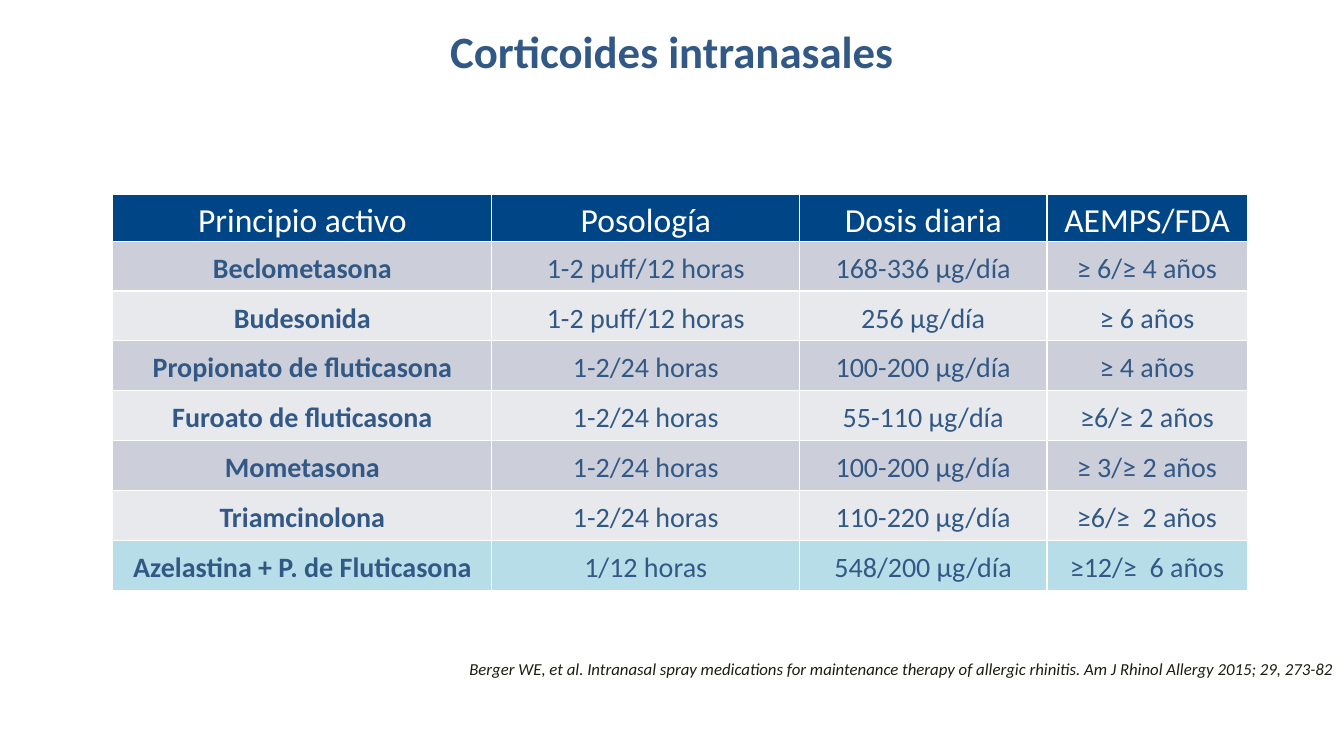
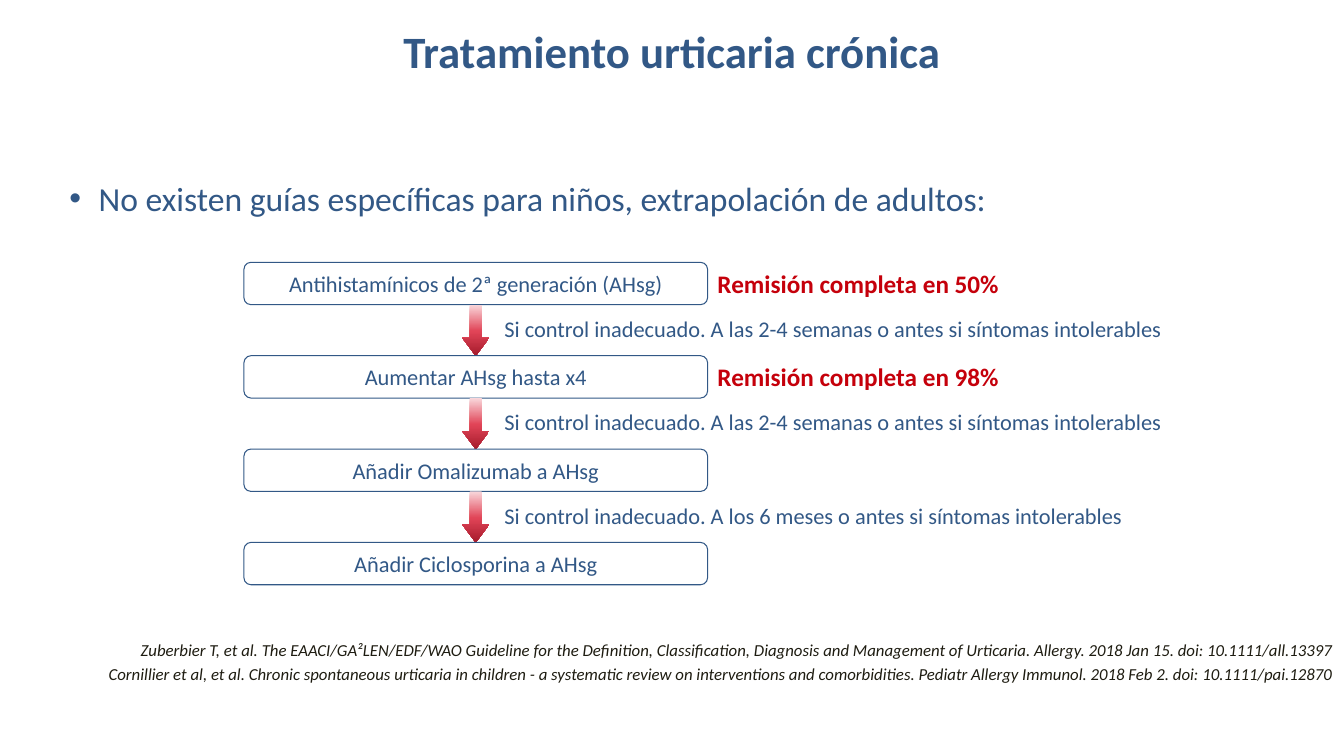
import pptx
import pptx.util
import pptx.dml.color
import pptx.enum.shapes
import pptx.enum.text
import pptx.oxml
import pptx.oxml.ns

ALIGN = pptx.enum.text.PP_ALIGN
ANCHOR = pptx.enum.text.MSO_ANCHOR
SHAPE = pptx.enum.shapes.MSO_SHAPE
NS = pptx.oxml.ns.nsdecls("a")


def color(hex_value):
    return pptx.dml.color.RGBColor.from_string(hex_value)


class Deck:
    FONT = "Calibri"
    BLUE = "325886"
    NAVY = "004586"
    WHITE = "FFFFFF"
    RED = "C5000B"
    BANDS = ("CCCFD9", "E7E9ED")
    HIGHLIGHT = "B7DEE8"
    SOURCE_INK = "1E1C11"
    ARROW_STOPS = ((0, "F9D8DC"), (52, "E14457"), (100, "A51B2C"))
    COLUMNS = ROWS = 100

    def __init__(self):
        self.presentation = pptx.Presentation()
        self.presentation.slide_width = pptx.util.Inches(13.33)
        self.presentation.slide_height = pptx.util.Inches(7.5)
        self.slide = None

    def x(self, columns):
        return round(self.presentation.slide_width * columns / self.COLUMNS)

    def y(self, rows):
        return round(self.presentation.slide_height * rows / self.ROWS)

    def place(self, left, top, width, height):
        return self.x(left), self.y(top), self.x(width), self.y(height)

    def new_slide(self, title):
        self.slide = self.presentation.slides.add_slide(self.presentation.slide_layouts[6])
        self.text((5, 2.35, 90, 8.8), [title], 32, bold=True, align=ALIGN.CENTER)

    def styled_run(self, paragraph, words, size, ink=BLUE, bold=False, italic=False,
                   align=ALIGN.LEFT):
        paragraph.alignment = align
        run = paragraph.add_run()
        run.text = words
        run.font.name = self.FONT
        run.font.size = pptx.util.Pt(size)
        run.font.bold = bold
        run.font.italic = italic
        run.font.color.rgb = color(ink)

    def text(self, area, lines, size, anchor=ANCHOR.MIDDLE, space=0, **style):
        frame = self.slide.shapes.add_textbox(*self.place(*area)).text_frame
        frame.word_wrap = True
        frame.vertical_anchor = anchor
        for number, words in enumerate(lines):
            paragraph = frame.paragraphs[0]
            if number:
                paragraph = frame.add_paragraph()
                paragraph.space_before = pptx.util.Pt(space)
            self.styled_run(paragraph, words, size, **style)
        return frame

    def bullet(self, area, words):
        paragraph = self.text(area, [words], 24, anchor=ANCHOR.TOP).paragraphs[0]
        properties = paragraph._p.get_or_add_pPr()
        properties.set("marL", str(pptx.util.Inches(0.88)))
        properties.set("indent", str(pptx.util.Inches(-0.29)))
        properties.append(pptx.oxml.parse_xml(f'<a:buFont {NS} typeface="Arial"/>'))
        properties.append(pptx.oxml.parse_xml(f'<a:buChar {NS} char="•"/>'))

    def sources(self, top, lines):
        self.text((5, top, 95, 7), lines, 12, anchor=ANCHOR.TOP, space=2.4,
                  ink=self.SOURCE_INK, italic=True, align=ALIGN.RIGHT)

    def step(self, area, words):
        box = self.slide.shapes.add_shape(SHAPE.ROUNDED_RECTANGLE, *self.place(*area))
        box.shadow.inherit = False
        box.fill.background()
        box.line.color.rgb = color(self.BLUE)
        box.line.width = pptx.util.Pt(0.75)
        box.text_frame.word_wrap = True
        box.text_frame.vertical_anchor = ANCHOR.MIDDLE
        self.styled_run(box.text_frame.paragraphs[0], words, 16, align=ALIGN.CENTER)

    def arrow(self, area):
        arrow = self.slide.shapes.add_shape(SHAPE.DOWN_ARROW, *self.place(*area))
        arrow.shadow.inherit = False
        arrow.adjustments[0] = 0.43
        arrow.adjustments[1] = 0.66
        arrow.line.fill.background()
        stops = "".join(f'<a:gs pos="{share * 1000}"><a:srgbClr val="{ink}"/></a:gs>'
                        for share, ink in self.ARROW_STOPS)
        gradient = (f'<a:gradFill {NS} rotWithShape="1"><a:gsLst>{stops}</a:gsLst>'
                    '<a:lin ang="5400000" scaled="0"/></a:gradFill>')
        arrow._element.spPr.find(pptx.oxml.ns.qn("a:prstGeom")).addnext(
            pptx.oxml.parse_xml(gradient))

    def cell(self, cell, words, size, fill, **style):
        cell.margin_left = cell.margin_right = pptx.util.Inches(0.07)
        cell.margin_top = cell.margin_bottom = 0
        cell.vertical_anchor = ANCHOR.MIDDLE
        properties = cell._tc.get_or_add_tcPr()
        for side in "LRTB":
            properties.append(pptx.oxml.parse_xml(
                f'<a:ln{side} {NS} w="12700"><a:solidFill>'
                f'<a:srgbClr val="{self.WHITE}"/></a:solidFill></a:ln{side}>'))
        cell.fill.solid()
        cell.fill.fore_color.rgb = color(fill)
        paragraph = cell.text_frame.paragraphs[0]
        paragraph.line_spacing = 1.15
        paragraph.space_after = pptx.util.Pt(10)
        self.styled_run(paragraph, words, size, align=ALIGN.CENTER, **style)

    def table(self, left, top, widths, header_height, row_height, header, records):
        heights = [header_height] + [row_height] * len(records)
        table = self.slide.shapes.add_table(
            len(heights), len(widths),
            *self.place(left, top, sum(widths), sum(heights))).table
        table.horz_banding = False
        for column, width in zip(table.columns, widths):
            column.width = self.x(width)
        for row, height in zip(table.rows, heights):
            row.height = self.y(height)
        for column, words in enumerate(header):
            self.cell(table.cell(0, column), words, 24, self.NAVY, ink=self.WHITE)
        for row, record in enumerate(records, 1):
            fill = self.HIGHLIGHT if row == len(records) else self.BANDS[(row - 1) % 2]
            for column, words in enumerate(record):
                self.cell(table.cell(row, column), words, 20, fill, bold=column == 0)


def corticoids(deck):
    deck.new_slide("Corticoides intranasales")
    deck.table(
        8.4, 25.75, (28.2, 22.9, 18.4, 14.9), 6.15, 6.6,
        ("Principio activo", "Posología", "Dosis diaria", "AEMPS/FDA"),
        (
            ("Beclometasona", "1-2 puff/12 horas", "168-336 µg/día", "≥ 6/≥ 4 años"),
            ("Budesonida", "1-2 puff/12 horas", "256 µg/día", "≥ 6 años"),
            ("Propionato de fluticasona", "1-2/24 horas", "100-200 µg/día", "≥ 4 años"),
            ("Furoato de fluticasona", "1-2/24 horas", "55-110 µg/día", "≥6/≥ 2 años"),
            ("Mometasona", "1-2/24 horas", "100-200 µg/día", "≥ 3/≥ 2 años"),
            ("Triamcinolona", "1-2/24 horas", "110-220 µg/día", "≥6/≥  2 años"),
            ("Azelastina + P. de Fluticasona", "1/12 horas", "548/200 µg/día", "≥12/≥  6 años"),
        ))
    deck.sources(86.5, [
        "Berger WE, et al. Intranasal spray medications for maintenance therapy of allergic "
        "rhinitis. Am J Rhinol Allergy 2015; 29, 273-82"])


def urticaria(deck):
    deck.new_slide("Tratamiento urticaria crónica")
    deck.bullet((0, 22.9, 95, 10),
                "No existen guías específicas para niños, extrapolación de adultos:")
    inadequate = "Si control inadecuado. A {} o antes si síntomas intolerables"
    weeks, months = "las 2-4 semanas", "los 6 meses"
    treatments = (
        ("Antihistamínicos de 2ª generación (AHsg)", "50%", weeks),
        ("Aumentar AHsg hasta x4", "98%", weeks),
        ("Añadir Omalizumab a AHsg", None, months),
        ("Añadir Ciclosporina a AHsg", None, None),
    )
    left, width, height, pitch = 18.15, 34.5, 5.6, 12.35
    gap = pitch - height
    for number, (treatment, remission, wait) in enumerate(treatments):
        top = 34.7 + number * pitch
        deck.step((left, top, width, height), treatment)
        if remission:
            deck.text((left + width, top, 27, height), [f"Remisión completa en {remission}"],
                      18, ink=deck.RED, bold=True)
        if wait:
            deck.arrow((left + width / 2 - 1, top + height, 2, gap))
            deck.text((36.8, top + height - 0.2, 53.5, gap), [inadequate.format(wait)], 16)
    deck.sources(84, [
        "Zuberbier T, et al. The EAACI/GA²LEN/EDF/WAO Guideline for the Definition, "
        "Classification, Diagnosis and Management of Urticaria. Allergy. 2018 Jan 15. "
        "doi: 10.1111/all.13397",
        "Cornillier et al, et al. Chronic spontaneous urticaria in children - a systematic "
        "review on interventions and comorbidities. Pediatr Allergy Immunol. 2018 Feb 2. "
        "doi: 10.1111/pai.12870"])


def main():
    deck = Deck()
    corticoids(deck)
    urticaria(deck)
    deck.presentation.save("out.pptx")


if __name__ == "__main__":
    main()
